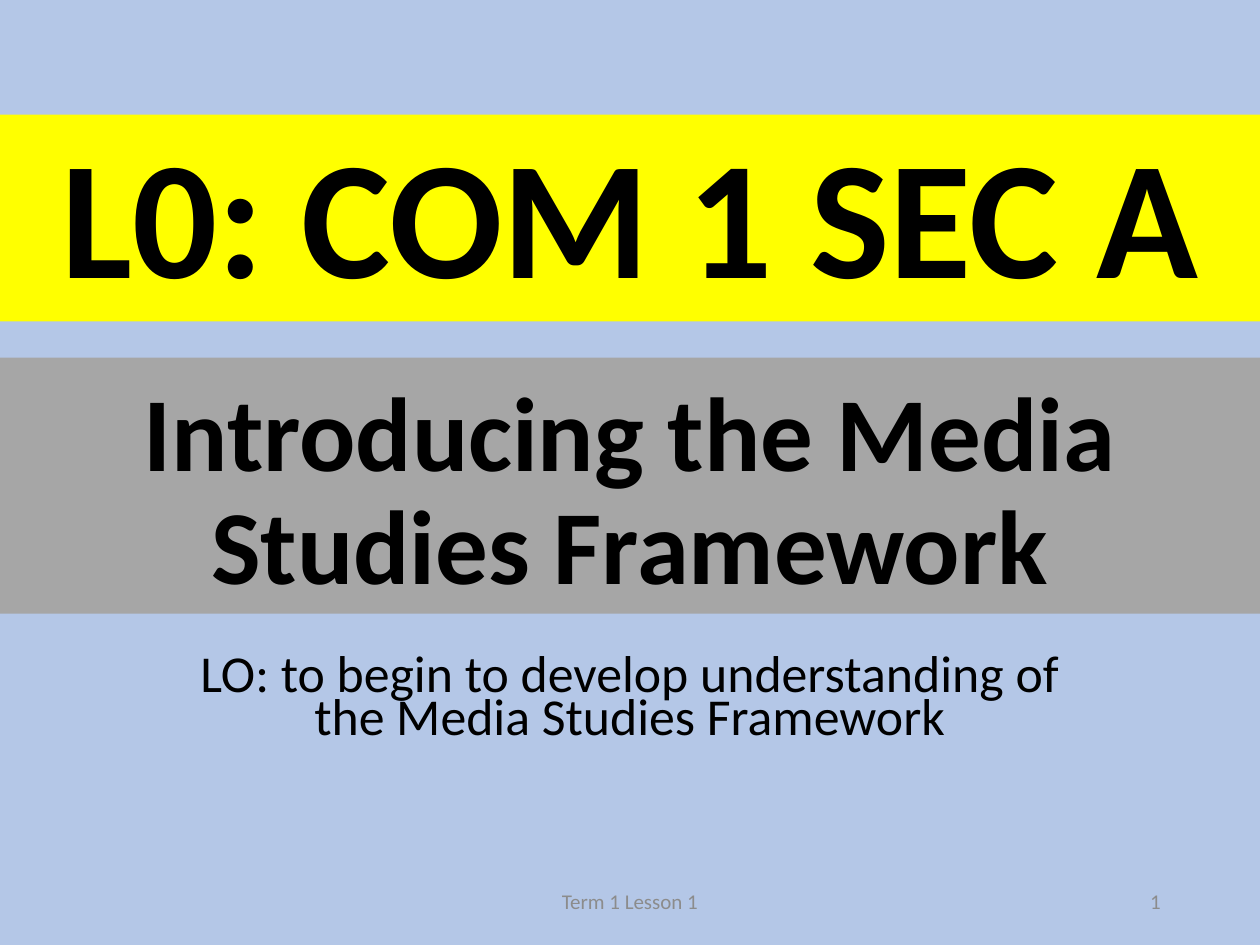
from pptx import Presentation
from pptx.dml.color import RGBColor
from pptx.enum.shapes import MSO_SHAPE
from pptx.enum.text import MSO_ANCHOR, PP_ALIGN
from pptx.util import Cm, Pt

RECTANGLE = MSO_SHAPE.RECTANGLE
TOP, MIDDLE, BOTTOM = MSO_ANCHOR.TOP, MSO_ANCHOR.MIDDLE, MSO_ANCHOR.BOTTOM
CENTER, RIGHT = PP_ALIGN.CENTER, PP_ALIGN.RIGHT

SLIDE_WIDTH, SLIDE_HEIGHT = 25.4, 19.05
FONT = "Calibri"
BACKGROUND, YELLOW, GREY = "B4C7E7", "FFFF00", "A6A6A6"
BLACK, FOOTER_GREY = "000000", "8C8C8C"


def set_color(color_format, value):
    color_format.rgb = RGBColor.from_string(value)


def fill_solid(fill, value):
    fill.solid()
    set_color(fill.fore_color, value)


def write(holder, text, size, color=BLACK, bold=False, align=CENTER,
          anchor=MIDDLE, line_spacing=1.0, space_before=0):
    frame = holder.text_frame
    frame.word_wrap = True
    frame.vertical_anchor = anchor
    paragraph = frame.paragraphs[0]
    paragraph.text = text
    paragraph.alignment = align
    paragraph.line_spacing = line_spacing
    paragraph.space_before = Pt(space_before)
    font = paragraph.font
    font.name, font.size, font.bold = FONT, Pt(size), bold
    set_color(font.color, color)


def add_band(slide, top, height, color, heading, size):
    """Full-width coloured strip with a bold heading."""
    band = slide.shapes.add_shape(RECTANGLE, 0, Cm(top), Cm(SLIDE_WIDTH), Cm(height))
    band.shadow.inherit = False
    fill_solid(band.fill, color)
    band.line.fill.background()
    write(band, heading, size, bold=True, anchor=BOTTOM, line_spacing=0.9)


def add_objective(slide, left, top, width, height):
    objective = slide.shapes.add_textbox(Cm(left), Cm(top), Cm(width), Cm(height))
    write(objective, "LO: to begin to develop understanding of the Media Studies Framework",
          29.6, anchor=TOP, line_spacing=0.7, space_before=10)


def add_footer(slide, top, height, margin):
    """Lesson name in the centre, page number at the right margin."""
    lesson_width, number_width = 8.58, 5.72
    entries = [
        ("Term 1 Lesson 1", (SLIDE_WIDTH - lesson_width) / 2, lesson_width, CENTER),
        ("1", SLIDE_WIDTH - margin - number_width, number_width, RIGHT),
    ]
    for text, left, width, align in entries:
        entry = slide.shapes.add_textbox(Cm(left), Cm(top), Cm(width), Cm(height))
        write(entry, text, 12, FOOTER_GREY, align=align)


def main():
    presentation = Presentation()
    presentation.slide_width = Cm(SLIDE_WIDTH)
    presentation.slide_height = Cm(SLIDE_HEIGHT)
    slide = presentation.slides.add_slide(presentation.slide_layouts[6])
    fill_solid(slide.background.fill, BACKGROUND)

    add_objective(slide, 3.18, 13.13, 19.05, 2.13)
    add_footer(slide, 17.65, 1.02, 1.75)
    add_band(slide, 2.31, 4.17, YELLOW, "L0: COM 1 SEC A", 96)
    add_band(slide, 7.21, 5.16, GREY, "Introducing the Media Studies Framework", 60)
    presentation.save("out.pptx")


if __name__ == "__main__":
    main()
